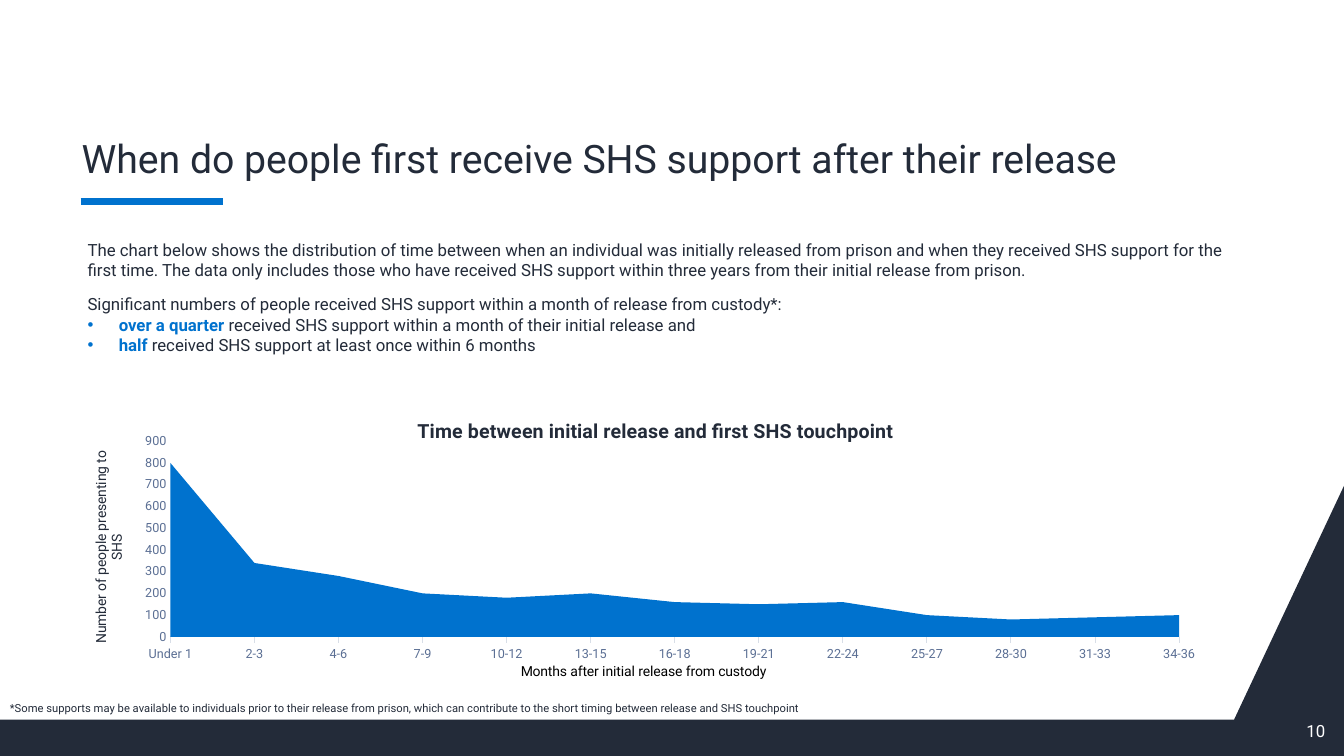
import pptx
import pptx.util
import pptx.chart.data
import pptx.dml.color
import pptx.enum.chart
import pptx.enum.shapes
import pptx.enum.text
import pptx.oxml
import pptx.oxml.ns
from lxml import etree

Inches, Pt = pptx.util.Inches, pptx.util.Pt
qn = pptx.oxml.ns.qn
FONT = "Roboto"
HUES = {"navy": "232B39", "blue": "0072CE", "slate": "5B6F94",
        "rule": "D8DEE7", "white": "FFFFFF", "black": "000000"}
WIDE, HIGH = 13.33, 7.5
SALES = {"Under 1": 800, "2-3": 340, "4-6": 280, "7-9": 200, "10-12": 180,
         "13-15": 200, "16-18": 160, "19-21": 150, "22-24": 160,
         "25-27": 100, "28-30": 80, "31-33": 90, "34-36": 100}
COUNTS = SALES


def color(name):
    return pptx.dml.color.RGBColor.from_string(HUES[name])


def style(font, size, hue="navy", bold=False):
    font.name, font.size, font.bold = FONT, Pt(size), bold
    font.color.rgb = color(hue)


def write(para, text, size=12, hue="navy", bold=False):
    run = para.add_run()
    run.text = text
    style(run.font, size, hue, bold)


def add_box(slide, box):
    frame = slide.shapes.add_textbox(*map(Inches, box)).text_frame
    frame.word_wrap = True
    return frame


def add_note(slide, box, text, **form):
    write(add_box(slide, box).paragraphs[0], text, **form)


def add_base(slide, box):
    """Dark footer band that rises to a wedge at the right."""
    left, top, wide, high = box
    band = top + 2.32
    points = [(left, band), (left + 12.24, band), (left + wide, top),
              (left + wide, top + high), (left, top + high)]
    points = [(Inches(x), Inches(y)) for x, y in points]
    build = slide.shapes.build_freeform(*points[0])
    build.add_line_segments(points[1:])
    shape = build.convert_to_shape()
    shape.shadow.inherit = False
    shape.fill.solid()
    shape.fill.fore_color.rgb = color("navy")
    shape.line.fill.background()


def add_head(slide, box, text):
    """Title with a short blue rule below it."""
    left, top, wide, high = box
    frame = add_box(slide, box)
    frame.margin_left = frame.margin_right = Inches(0.04)
    frame.vertical_anchor = pptx.enum.text.MSO_ANCHOR.BOTTOM
    frame.paragraphs[0].line_spacing = 0.9
    write(frame.paragraphs[0], text, size=28)
    start, y = left + 0.03, top + high + 0.15
    rule = slide.shapes.add_connector(
        pptx.enum.shapes.MSO_CONNECTOR.STRAIGHT,
        Inches(start), Inches(y), Inches(start + 1.41), Inches(y))
    rule.line.color.rgb = color("blue")
    rule.line.width = Pt(4.5)
    etree.SubElement(rule._element.spPr, qn("a:effectLst"))


def add_bullet(para):
    props = para._p.get_or_add_pPr()
    props.set("marL", str(Inches(0.31)))
    props.set("indent", str(-Inches(0.31)))
    etree.SubElement(props, qn("a:buFont"), typeface="Arial")
    etree.SubElement(props, qn("a:buChar"), char="•")


def add_body(slide, box):
    """Introduction and two bullets with a bold lead."""
    frame = add_box(slide, box)
    write(frame.paragraphs[0],
          "The chart below shows the distribution of time between when an "
          "individual was initially released from prison and when they "
          "received SHS support for the first time. The data only includes "
          "those who have received SHS support within three years from "
          "their initial release from prison.")
    para = frame.add_paragraph()
    para.space_before = Pt(10)
    write(para, "Significant numbers of people received SHS support within "
                "a month of release from custody*:")
    for lead, rest in (
            ("over a quarter", " received SHS support within a month of "
                               "their initial release and"),
            ("half", " received SHS support at least once within 6 months")):
        para = frame.add_paragraph()
        add_bullet(para)
        write(para, lead, hue="blue", bold=True)
        write(para, rest)


def place(node, **spots):
    """Set a manual layout in fractions of the chart."""
    old = node.find(qn("c:layout"))
    if old is None:
        old = pptx.oxml.parse_xml(
            "<c:layout %s/>" % pptx.oxml.ns.nsdecls("c"))
        node.insert(0, old)
    manual = etree.SubElement(old, qn("c:manualLayout"))
    if "w" in spots:
        etree.SubElement(manual, qn("c:layoutTarget"), val="inner")
    for key in ("x", "y"):
        etree.SubElement(manual, qn("c:%sMode" % key), val="edge")
    for key, value in spots.items():
        etree.SubElement(manual, qn("c:" + key), val=str(value))


def name_part(part, text, x, y, **form):
    title = part.axis_title if hasattr(part, "axis_title") else part.chart_title
    write(title.text_frame.paragraphs[0], text, **form)
    place(title._element, x=x, y=y)


def add_plot(slide, box):
    """Area chart of months to first support."""
    kinds = pptx.enum.chart
    data = pptx.chart.data.CategoryChartData()
    data.categories = list(COUNTS)
    data.add_series("Series 1", list(COUNTS.values()))
    chart = slide.shapes.add_chart(
        kinds.XL_CHART_TYPE.AREA, *map(Inches, box), data).chart
    style(chart.font, 10)
    chart.has_legend = False
    fill = chart.plots[0].series[0].format.fill
    fill.solid()
    fill.fore_color.rgb = color("blue")
    chart.plots[0].vary_by_categories = False
    months, count = chart.category_axis, chart.value_axis
    for axis in (months, count):
        style(axis.tick_labels.font, 9, "slate")
        axis.has_major_gridlines = False
        axis.major_tick_mark = axis.minor_tick_mark = kinds.XL_TICK_MARK.NONE
    months.major_tick_mark = kinds.XL_TICK_MARK.OUTSIDE
    months.format.line.color.rgb = color("rule")
    months.format.line.width = Pt(0.75)
    count.format.line.fill.background()
    count.minimum_scale, count.maximum_scale, count.major_unit = 0, 900, 100
    for node in count._element.iter(qn("c:crossBetween")):
        node.set("val", "midCat")
    name_part(chart, "Time between initial release and first SHS touchpoint",
              0.29, 0.04, size=14, bold=True)
    name_part(months, "Months after initial release from custody",
              0.38, 0.92, size=10, hue="black")
    name_part(count, "Number of people presenting to SHS",
              0.01, 0.17, size=10)
    area = chart._chartSpace.find(".//" + qn("c:plotArea"))
    place(area, x=0.08, y=0.14, w=0.87, h=0.7)


def main():
    deck = pptx.Presentation()
    deck.slide_width, deck.slide_height = Inches(WIDE), Inches(HIGH)
    slide = deck.slides.add_slide(deck.slide_layouts[6])
    left, wide = 0.77, 11.5
    add_base(slide, (0, 4.82, WIDE, HIGH - 4.82))
    add_head(slide, (left, 0.72, wide, 1.13),
             "When do people first receive SHS support after their release")
    add_plot(slide, (left, 3.99, wide, 2.79))
    add_body(slide, (left, 2.33, wide, 1.45))
    add_note(slide, (0, 6.91, 12.27, 0.37),
             "*Some supports may be available to individuals prior to their "
             "release from prison, which can contribute to the short timing "
             "between release and SHS touchpoint", size=8)
    add_note(slide, (12.86, 7.1, 0.47, 0.3), "10", hue="white")
    deck.save("out.pptx")


if __name__ == "__main__":
    main()
